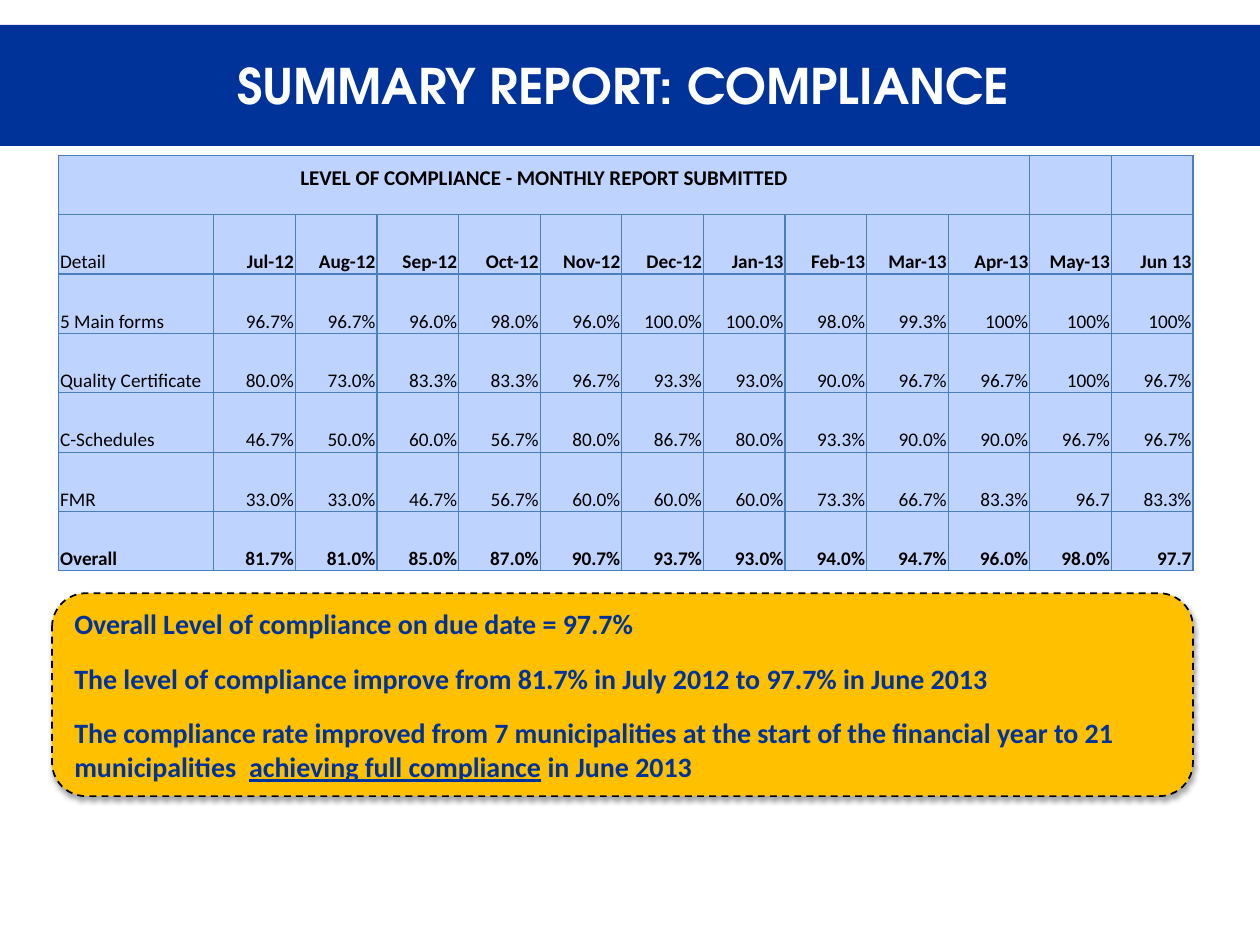
from dataclasses import dataclass
from typing import Any

from lxml import etree
from pptx import Presentation
from pptx.dml.color import RGBColor
from pptx.enum.dml import MSO_LINE
from pptx.enum.shapes import MSO_SHAPE
from pptx.enum.text import MSO_ANCHOR, MSO_AUTO_SIZE, PP_ALIGN
from pptx.oxml.ns import qn
from pptx.util import Cm, Pt

TITLE_ONLY = 5
DASH = MSO_LINE.DASH
ROUNDED = MSO_SHAPE.ROUNDED_RECTANGLE
MIDDLE, BOTTOM = MSO_ANCHOR.MIDDLE, MSO_ANCHOR.BOTTOM
LEFT, CENTER, RIGHT = PP_ALIGN.LEFT, PP_ALIGN.CENTER, PP_ALIGN.RIGHT
NO_AUTOFIT = MSO_AUTO_SIZE.NONE

COLORS = {
    "navy": "003399",
    "white": "FFFFFF",
    "black": "000000",
    "amber": "FFC000",
    "cell": "BFD3FF",
    "border": "4B7EBC",
}
TITLE_FONT, BODY_FONT = "TeX Gyre Adventor", "Calibri"


@dataclass
class TableRow:
    label: str
    values: str
    label_bold: bool = False
    values_bold: bool = False


@dataclass
class Part:
    text: str
    underline: bool = False


TABLE_HEADING = "LEVEL OF COMPLIANCE - MONTHLY REPORT SUBMITTED"
HEADING_SPAN = 11
MONTHS = ("Jul-12,Aug-12,Sep-12,Oct-12,Nov-12,Dec-12,"
          "Jan-13,Feb-13,Mar-13,Apr-13,May-13,Jun 13")
ROWS = [
    TableRow("Detail", MONTHS, values_bold=True),
    TableRow("5 Main forms", "96.7%,96.7%,96.0%,98.0%,96.0%,100.0%,"
                             "100.0%,98.0%,99.3%,100%,100%,100%"),
    TableRow("Quality Certificate", "80.0%,73.0%,83.3%,83.3%,96.7%,93.3%,"
                                    "93.0%,90.0%,96.7%,96.7%,100%,96.7%"),
    TableRow("C-Schedules", "46.7%,50.0%,60.0%,56.7%,80.0%,86.7%,"
                            "80.0%,93.3%,90.0%,90.0%,96.7%,96.7%"),
    TableRow("FMR", "33.0%,33.0%,46.7%,56.7%,60.0%,60.0%,"
                    "60.0%,73.3%,66.7%,83.3%,96.7,83.3%"),
    TableRow("Overall", "81.7%,81.0%,85.0%,87.0%,90.7%,93.7%,"
                        "93.0%,94.0%,94.7%,96.0%,98.0%,97.7", True, True),
]
FINDINGS = [
    [Part("Overall Level of compliance on due date = 97.7%")],
    [Part("The level of compliance improve from 81.7% in July 2012 to 97.7% in June 2013")],
    [Part("The compliance rate improved from 7 municipalities at the start of "
          "the financial year to 21 municipalities  "),
     Part("achieving full compliance", underline=True),
     Part(" in June 2013")],
]


def color(name: str) -> RGBColor:
    return RGBColor.from_string(COLORS[name])


def format_font(font: Any, name: str, size: float, color_name: str, bold: bool) -> None:
    font.name, font.size, font.bold = name, Pt(size), bold
    font.color.rgb = color(color_name)


def add_title(slide: Any) -> None:
    title = slide.shapes.title
    title.left, title.top, title.width, title.height = Cm(0), Cm(0.5), Cm(25.4), Cm(2.44)
    title.fill.solid()
    title.fill.fore_color.rgb = color("navy")
    frame = title.text_frame
    frame.text = "SUMMARY REPORT: COMPLIANCE "
    frame.vertical_anchor = MIDDLE
    frame.auto_size = NO_AUTOFIT
    paragraph = frame.paragraphs[0]
    paragraph.alignment = CENTER
    format_font(paragraph.runs[0].font, TITLE_FONT, 28, "white", True)


def add_shadow(shape: Any) -> None:
    shape.shadow.inherit = False
    effects = shape.element.spPr.find(qn("a:effectLst"))
    shadow = etree.SubElement(effects, qn("a:outerShdw"), blurRad=str(Pt(3.1)),
                              dist=str(Pt(1.8)), dir="5400000", rotWithShape="0")
    shade = etree.SubElement(shadow, qn("a:srgbClr"), val=COLORS["black"])
    etree.SubElement(shade, qn("a:alpha"), val="35000")


def add_findings(slide: Any) -> None:
    shape = slide.shapes.add_shape(ROUNDED, Cm(1.05), Cm(11.96), Cm(23), Cm(4.09))
    shape.fill.solid()
    shape.fill.fore_color.rgb = color("amber")
    shape.line.color.rgb = color("black")
    shape.line.width = Pt(1)
    shape.line.dash_style = DASH
    add_shadow(shape)
    frame = shape.text_frame
    frame.word_wrap = True
    frame.vertical_anchor = MIDDLE
    for index, parts in enumerate(FINDINGS):
        paragraph = frame.add_paragraph() if index else frame.paragraphs[0]
        paragraph.alignment = LEFT
        paragraph.space_before = Pt(6 if index else 0)
        paragraph.space_after = Pt(6)
        for part in parts:
            run = paragraph.add_run()
            run.text = part.text
            format_font(run.font, BODY_FONT, 16, "navy", True)
            run.font.underline = part.underline


def style_cell(cell: Any) -> None:
    cell.fill.solid()
    cell.fill.fore_color.rgb = color("cell")
    cell.vertical_anchor = BOTTOM
    cell.margin_left = cell.margin_right = cell.margin_top = Cm(0.03)
    cell.margin_bottom = 0
    properties = cell._tc.get_or_add_tcPr()
    for position, side in enumerate(("lnL", "lnR", "lnT", "lnB")):
        line = etree.Element(qn(f"a:{side}"), w=str(Pt(0.75)))
        fill = etree.SubElement(line, qn("a:solidFill"))
        etree.SubElement(fill, qn("a:srgbClr"), val=COLORS["border"])
        properties.insert(position, line)


def write_cell(cell: Any, text: str, alignment: Any, bold: bool, size: float = 11) -> None:
    cell.text_frame.text = text
    paragraph = cell.text_frame.paragraphs[0]
    paragraph.alignment = alignment
    format_font(paragraph.runs[0].font, BODY_FONT, size, "black", bold)


def add_compliance_table(slide: Any) -> None:
    row_count, column_count = len(ROWS) + 1, len(MONTHS.split(",")) + 1
    frame = slide.shapes.add_table(row_count, column_count,
                                   Cm(1.18), Cm(3.13), Cm(22.87), Cm(8.38))
    table = frame.table
    for index, column in enumerate(table.columns):
        column.width = Cm(1.645) if index else Cm(3.13)
    for table_row in table.rows:
        table_row.height = Cm(8.38 / row_count)
    for cell in table.iter_cells():
        style_cell(cell)

    # Heading row
    heading = table.cell(0, 0)
    heading.merge(table.cell(0, HEADING_SPAN - 1))
    write_cell(heading, TABLE_HEADING, CENTER, True, 12)
    heading.margin_bottom = Cm(0.48)

    # Months and monthly values
    for row_index, row in enumerate(ROWS, start=1):
        write_cell(table.cell(row_index, 0), row.label, LEFT, row.label_bold)
        for column_index, value in enumerate(row.values.split(","), start=1):
            write_cell(table.cell(row_index, column_index), value, RIGHT, row.values_bold)


def main() -> None:
    presentation = Presentation()
    presentation.slide_width, presentation.slide_height = Cm(25.4), Cm(19.05)
    slide = presentation.slides.add_slide(presentation.slide_layouts[TITLE_ONLY])
    add_title(slide)
    add_findings(slide)
    add_compliance_table(slide)
    presentation.save("out.pptx")


if __name__ == "__main__":
    main()
